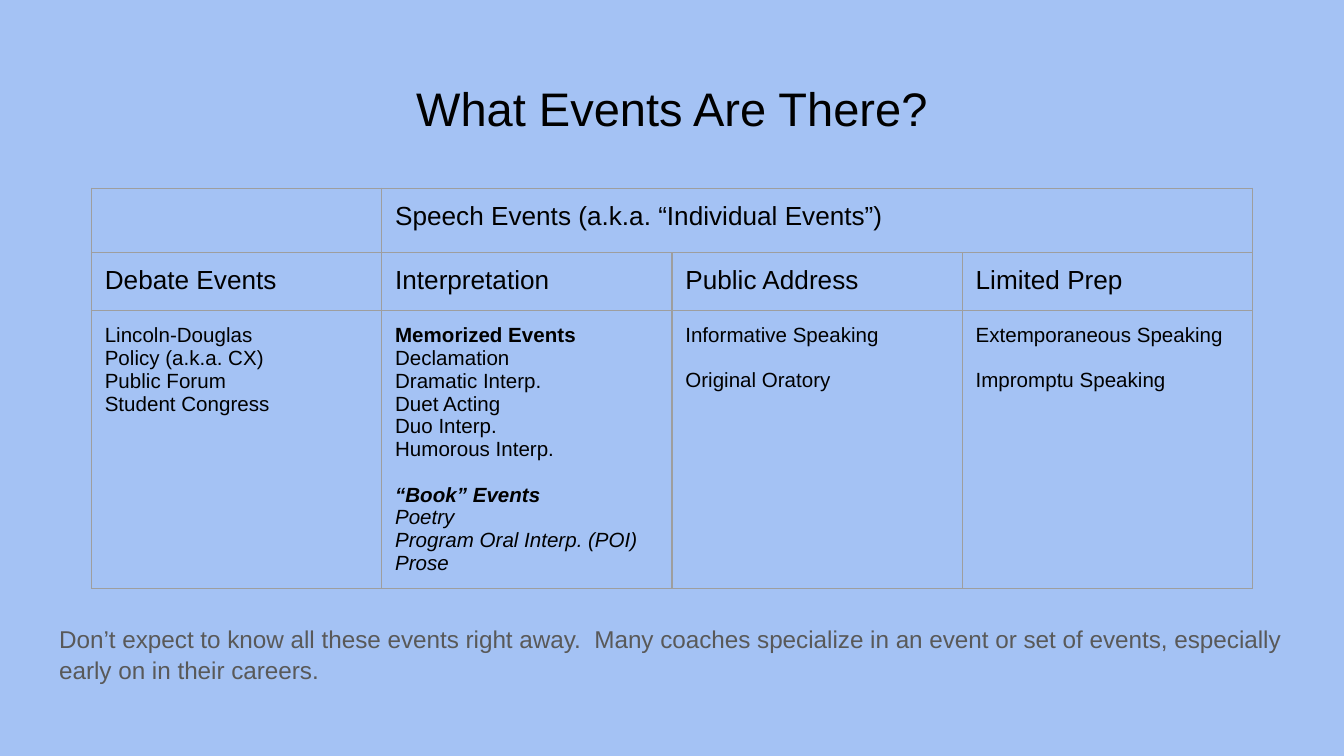
from pptx import Presentation, util as u
from pptx.dml.color import RGBColor
from pptx.enum import text
from pptx.oxml import parse_xml
from pptx.oxml.ns import nsdecls

SKY = RGBColor(0xA4, 0xC2, 0xF4)
BLACK = RGBColor(0, 0, 0)
GRAY = RGBColor(0x59, 0x59, 0x59)
BORDER = RGBColor(0x9E, 0x9E, 0x9E)


def write(frame, words, size, color=BLACK, bold=False, italic=False, before=0,
          spacing=1.0, align=text.PP_ALIGN.LEFT):
    """Fill the empty first paragraph, or add a new one."""
    para = frame.paragraphs[0]
    if para.runs:
        para = frame.add_paragraph()
    para.alignment = align
    para.line_spacing = spacing
    para.space_before = u.Pt(before)
    span = para.add_run()
    span.text = words
    font = span.font
    font.name, font.size, font.bold, font.italic = "Arial", u.Pt(size), bold, italic
    font.color.rgb = color
    return para


deck = Presentation()
deck.slide_width = u.Inches(10)
deck.slide_height = deck.slide_width * 9 // 16
page = deck.slides.add_slide(deck.slide_layouts[1])
page.background.fill.solid()
page.background.fill.fore_color.rgb = SKY

# Title and closing note share the same side margins
margin = u.Inches(0.34)
title, note = page.placeholders
for box, top, height, anchor in (
    (title, 0.49, 0.63, text.MSO_ANCHOR.MIDDLE),
    (note, 1.26, 4.1, text.MSO_ANCHOR.BOTTOM),
):
    box.left, box.width = margin, deck.slide_width - 2 * margin
    box.top, box.height = u.Inches(top), u.Inches(height)
    frame = box.text_frame
    frame.word_wrap = True
    frame.auto_size = text.MSO_AUTO_SIZE.NONE
    frame.vertical_anchor = anchor
    frame.margin_left = frame.margin_right = u.Inches(0.1)
    frame.margin_top = frame.margin_bottom = u.Inches(0.1)

write(title.text_frame, "What Events Are There?", 25.2, align=text.PP_ALIGN.CENTER)
note.text_frame.margin_bottom = u.Inches(0.27)
para = write(note.text_frame,
             "Don’t expect to know all these events right away.  Many coaches "
             "specialize in an event or set of events, especially early on in "
             "their careers.", 13, GRAY, spacing=1.05)
properties = para._p.get_or_add_pPr()
properties.set("marL", "0")
properties.set("indent", "0")
properties.append(parse_xml(f"<a:buNone {nsdecls('a')}/>"))

# Each column: heading, then groups of (first line style, other lines style, lines)
PLAIN, BOLD, ITALIC = {}, {"bold": True}, {"italic": True}
columns = [
    ("Debate Events", [
        (PLAIN, PLAIN, ["Lincoln-Douglas", "Policy (a.k.a. CX)", "Public Forum",
                        "Student Congress"])]),
    ("Interpretation", [
        (BOLD, PLAIN, ["Memorized Events", "Declamation", "Dramatic Interp.",
                       "Duet Acting", "Duo Interp.", "Humorous Interp."]),
        (BOLD | ITALIC, ITALIC, ["“Book” Events", "Poetry",
                                 "Program Oral Interp. (POI)", "Prose"])]),
    ("Public Address", [
        (PLAIN, PLAIN, ["Informative Speaking"]),
        (PLAIN, PLAIN, ["Original Oratory"])]),
    ("Limited Prep", [
        (PLAIN, PLAIN, ["Extemporaneous Speaking"]),
        (PLAIN, PLAIN, ["Impromptu Speaking"])]),
]
row_heights = [0.48, 0.43, 2.07]
column_width = 2.16

table = page.shapes.add_table(
    len(row_heights), len(columns), u.Inches(0.68), u.Inches(1.4),
    u.Inches(column_width * len(columns)), u.Inches(sum(row_heights))).table
table.first_row = table.horz_banding = False
for row, height in zip(table.rows, row_heights):
    row.height = u.Inches(height)
for column in table.columns:
    column.width = u.Inches(column_width)

for cell in table.iter_cells():
    cell.margin_left = cell.margin_right = u.Inches(0.1)
    cell.margin_top = cell.margin_bottom = u.Inches(0.1)
    for side in "LRTB":
        cell._tc.get_or_add_tcPr().append(parse_xml(
            f"<a:ln{side} {nsdecls('a')} w='{u.Pt(0.75)}'><a:solidFill>"
            f"<a:srgbClr val='{BORDER}'/></a:solidFill></a:ln{side}>"))
    cell.fill.background()

table.cell(0, 1).merge(table.cell(0, 3))
write(table.cell(0, 0).text_frame, "", 14)  # keeps the blank cell as low as its row
write(table.cell(0, 1).text_frame, "Speech Events (a.k.a. “Individual Events”)", 14)
for index, (heading, groups) in enumerate(columns):
    write(table.cell(1, index).text_frame, heading, 14)
    events = table.cell(2, index).text_frame
    for group, (first_style, style, lines) in enumerate(groups):
        write(events, lines[0], 11, before=12 if group else 0, **first_style)
        for line in lines[1:]:
            write(events, line, 11, **style)

deck.save("out.pptx")
